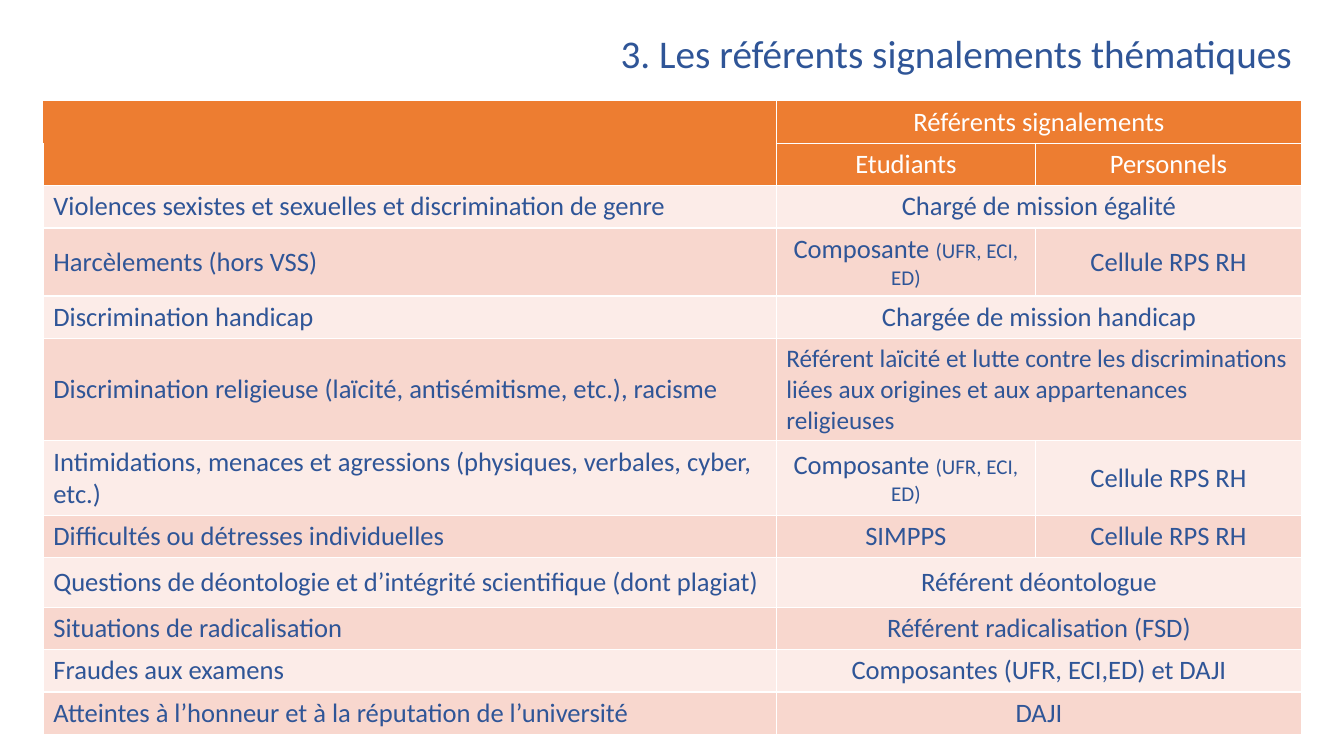
from dataclasses import dataclass

from lxml.etree import SubElement
from pptx import Presentation
from pptx.dml.color import RGBColor
from pptx.enum.text import MSO_ANCHOR, MSO_AUTO_SIZE, PP_ALIGN
from pptx.oxml.ns import qn
from pptx.util import Inches, Pt


@dataclass(frozen=True)
class Theme:
    font: str = "Calibri"
    blue: str = "2F5597"
    white: str = "FFFFFF"
    orange: str = "ED7D31"
    bands: tuple = ("FCECE8", "F8D7CE")
    title_size: int = 28
    cell_size: int = 19
    long_size: int = 18
    detail_size: int = 15


THEME = Theme()
HEADER_ROWS = 2
COLUMN_WIDTHS = (7.27, 2.57, 2.64)
ROW_HEIGHT = 0.41
TALL_ROWS = {3: 0.66, 5: 1.0, 6: 0.72, 8: 0.49}
DETAIL = "(UFR, ECI, ED)"
LONG_REFERENT = (
    "Référent laïcité et lutte contre les discriminations liées aux origines "
    "et aux appartenances religieuses"
)

# Subject, student referent, staff referent; None extends the student cell.
ROWS = [
    ("", "Référents signalements", None),
    ("", "Etudiants", "Personnels"),
    ("Violences sexistes et sexuelles et discrimination de genre", "Chargé de mission égalité", None),
    ("Harcèlements (hors VSS)", "Composante " + DETAIL, "Cellule RPS RH"),
    ("Discrimination handicap", "Chargée de mission handicap", None),
    ("Discrimination religieuse (laïcité, antisémitisme, etc.), racisme", LONG_REFERENT, None),
    ("Intimidations, menaces et agressions (physiques, verbales, cyber, etc.)",
     "Composante " + DETAIL, "Cellule RPS RH"),
    ("Difficultés ou détresses individuelles", "SIMPPS", "Cellule RPS RH"),
    ("Questions de déontologie et d’intégrité scientifique (dont plagiat)", "Référent déontologue", None),
    ("Situations de radicalisation", "Référent radicalisation (FSD)", None),
    ("Fraudes aux examens", "Composantes (UFR, ECI,ED) et DAJI", None),
    ("Atteintes à l’honneur et à la réputation de l’université", "DAJI", None),
]


def style_span(span, size, color):
    span.font.name = THEME.font
    span.font.size = Pt(size)
    span.font.bold = False
    span.font.color.rgb = RGBColor.from_string(color)


def set_borders(cell, hidden):
    """Draw white cell borders, leaving out the sides named in hidden."""
    properties = cell._tc.get_or_add_tcPr()
    for side in "LRTB":
        line = SubElement(properties, qn(f"a:ln{side}"), w=str(Pt(1)))
        if side in hidden:
            SubElement(line, qn("a:noFill"))
        else:
            fill = SubElement(line, qn("a:solidFill"))
            SubElement(fill, qn("a:srgbClr"), val=THEME.white)


deck = Presentation()
deck.slide_width, deck.slide_height = Inches(13.33), Inches(7.5)
page = deck.slides.add_slide(deck.slide_layouts[5])

title = page.shapes.title
title.left, title.top = Inches(0.43), Inches(0.24)
title.width, title.height = Inches(12.48), Inches(0.57)
title.text_frame.text = "3. Les référents signalements thématiques"
title.text_frame.auto_size = MSO_AUTO_SIZE.NONE
title.text_frame.vertical_anchor = MSO_ANCHOR.MIDDLE
title_para = title.text_frame.paragraphs[0]
title_para.alignment = PP_ALIGN.RIGHT
style_span(title_para.runs[0], THEME.title_size, THEME.blue)

table = page.shapes.add_table(
    len(ROWS), len(COLUMN_WIDTHS), Inches(0.43), Inches(1), Inches(12.48), Inches(6.22)
).table
table.first_row = False
table.horz_banding = False
for column, width in zip(table.columns, COLUMN_WIDTHS):
    column.width = Inches(width)

for row_index, texts in enumerate(ROWS):
    table.rows[row_index].height = Inches(TALL_ROWS.get(row_index, ROW_HEIGHT))
    is_header = row_index < HEADER_ROWS
    background = THEME.orange if is_header else THEME.bands[row_index % 2]
    color = THEME.white if is_header else THEME.blue

    for column_index, text in enumerate(texts):
        cell = table.cell(row_index, column_index)
        hidden = ("LTB", "T")[row_index] if is_header and column_index == 0 else ""
        set_borders(cell, hidden)
        cell.fill.solid()
        cell.fill.fore_color.rgb = RGBColor.from_string(background)
        cell.vertical_anchor = MSO_ANCHOR.TOP if is_header else MSO_ANCHOR.MIDDLE
        if not text:
            continue

        para = cell.text_frame.paragraphs[0]
        para.text = text.removesuffix(DETAIL)
        is_left = column_index == 0 or text == LONG_REFERENT
        para.alignment = PP_ALIGN.LEFT if is_left else PP_ALIGN.CENTER
        size = THEME.long_size if text == LONG_REFERENT else THEME.cell_size
        style_span(para.runs[0], size, color)
        if text.endswith(DETAIL):
            detail = para.add_run()
            detail.text = DETAIL
            style_span(detail, THEME.detail_size, color)

    if texts[2] is None:
        table.cell(row_index, 1).merge(table.cell(row_index, 2))

deck.save("out.pptx")
